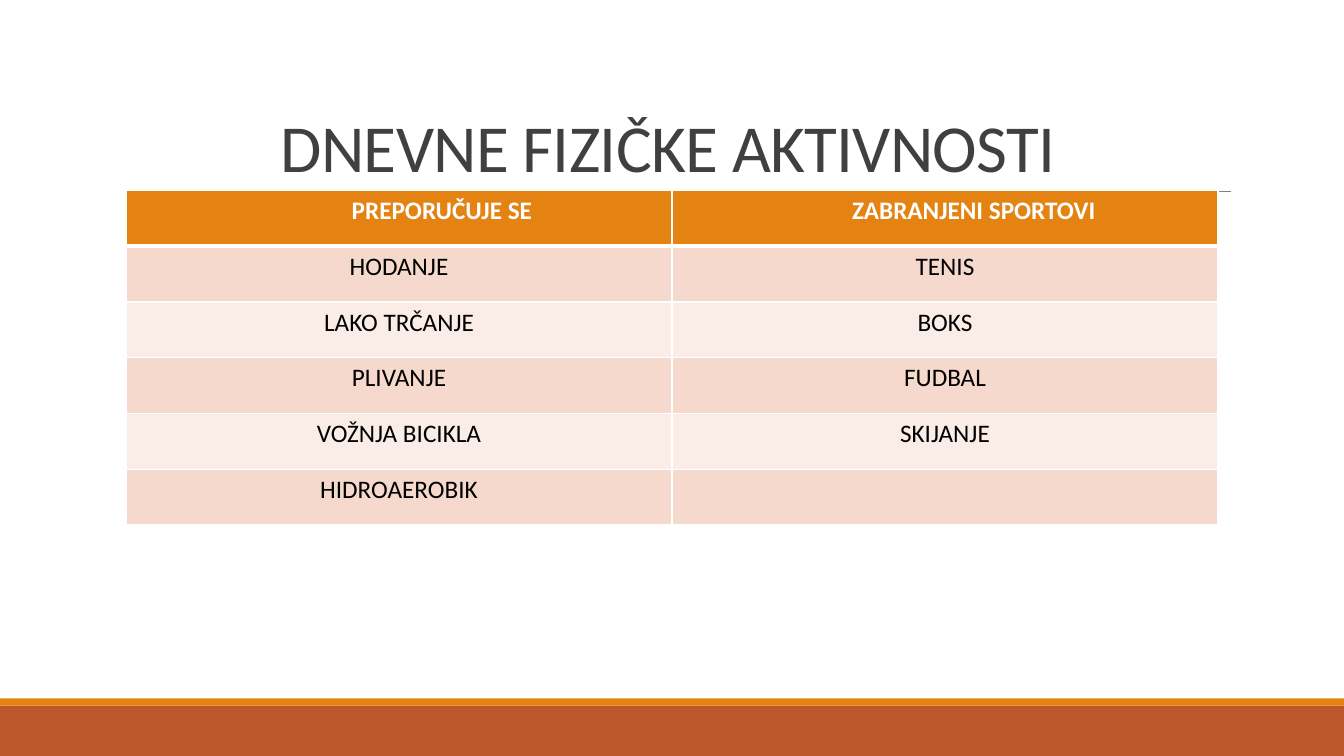
from lxml import etree
from pptx import Presentation
from pptx.dml.color import RGBColor
from pptx.enum.shapes import MSO_CONNECTOR, MSO_SHAPE
from pptx.enum.text import MSO_ANCHOR, MSO_AUTO_SIZE, PP_ALIGN
from pptx.oxml.ns import qn
from pptx.util import Inches, Pt

RECTANGLE = MSO_SHAPE.RECTANGLE
STRAIGHT = MSO_CONNECTOR.STRAIGHT
BOTTOM = MSO_ANCHOR.BOTTOM
NO_AUTOFIT = MSO_AUTO_SIZE.NONE
CENTER = PP_ALIGN.CENTER

COLORS = {
    "orange": "E48312", "rust": "BD582C", "rule": "808080", "title": "404040",
    "band_dark": "F5D9CC", "band_light": "FAEDE7", "white": "FFFFFF", "black": "000000",
}
FONT = "Calibri"
ACTIVITIES = [
    ("PREPORUČUJE SE", "ZABRANJENI SPORTOVI"),
    ("HODANJE", "TENIS"),
    ("LAKO TRČANJE", "BOKS"),
    ("PLIVANJE", "FUDBAL"),
    ("VOŽNJA BICIKLA", "SKIJANJE"),
    ("HIDROAEROBIK", ""),
]
HEADER_INDENTS = (0.95, 0.67)


def rgb(name):
    return RGBColor.from_string(COLORS[name])


def add_border(cell, side, points):
    properties = cell._tc.get_or_add_tcPr()
    border = etree.SubElement(properties, qn(f"a:ln{side}"), w=str(Pt(points)))
    fill = etree.SubElement(border, qn("a:solidFill"))
    etree.SubElement(fill, qn("a:srgbClr"), val=COLORS["white"])


prs = Presentation()
prs.slide_width = Inches(13.33)
prs.slide_height = Inches(7.5)
slide = prs.slides.add_slide(prs.slide_layouts[5])

# Footer bars
for top, height, color in ((7, 0.5, "rust"), (6.93, 0.07, "orange")):
    bar = slide.shapes.add_shape(
        RECTANGLE, 0, Inches(top), prs.slide_width, Inches(height))
    bar.shadow.inherit = False
    bar.fill.solid()
    bar.fill.fore_color.rgb = rgb(color)
    bar.line.fill.background()

# Rule under the title
rule = slide.shapes.add_connector(
    STRAIGHT, Inches(1.31), Inches(1.9), Inches(12.21), Inches(1.9))
rule.line.color.rgb = rgb("rule")
rule.line.width = Pt(0.5)
etree.SubElement(rule._element.spPr, qn("a:effectLst"))

# Title
title = slide.shapes.title
title_place = {"left": 1.2, "top": 0.31, "width": 11, "height": 1.59}
for attribute, inches in title_place.items():
    setattr(title, attribute, Inches(inches))
title_frame = title.text_frame
title_format = {"word_wrap": True, "auto_size": NO_AUTOFIT,
                "vertical_anchor": BOTTOM, "margin_right": Inches(0.25)}
for attribute, value in title_format.items():
    setattr(title_frame, attribute, value)
heading = title_frame.paragraphs[0]
heading.alignment = CENTER
heading.line_spacing = 0.85
heading_run = heading.add_run()
heading_run.text = "DNEVNE FIZIČKE AKTIVNOSTI"
heading_run.font.name = FONT
heading_run.font.size = Pt(48)
heading_run.font.color.rgb = rgb("title")
heading_run._r.get_or_add_rPr().set("spc", "-50")

# Activities table
activities = slide.shapes.add_table(
    len(ACTIVITIES), 2, Inches(1.25), Inches(1.89), Inches(10.83), Inches(3.32)).table
for row, labels in enumerate(ACTIVITIES):
    is_header = row == 0
    band = "orange" if is_header else "band_dark" if row % 2 else "band_light"
    for column, label in enumerate(labels):
        cell = activities.cell(row, column)
        borders = {"L": 1, "R": 1, "T": 3 if row == 1 else 1, "B": 3 if is_header else 1}
        for side, points in borders.items():
            add_border(cell, side, points)
        cell.fill.solid()
        cell.fill.fore_color.rgb = rgb(band)
        if is_header:
            cell.margin_left = Inches(HEADER_INDENTS[column])
        if label:
            paragraph = cell.text_frame.paragraphs[0]
            paragraph.alignment = CENTER
            run = paragraph.add_run()
            run.text = label
            label_format = {"name": FONT, "size": Pt(18), "bold": is_header}
            for attribute, value in label_format.items():
                setattr(run.font, attribute, value)
            run.font.color.rgb = rgb("white" if is_header else "black")

prs.save("out.pptx")
